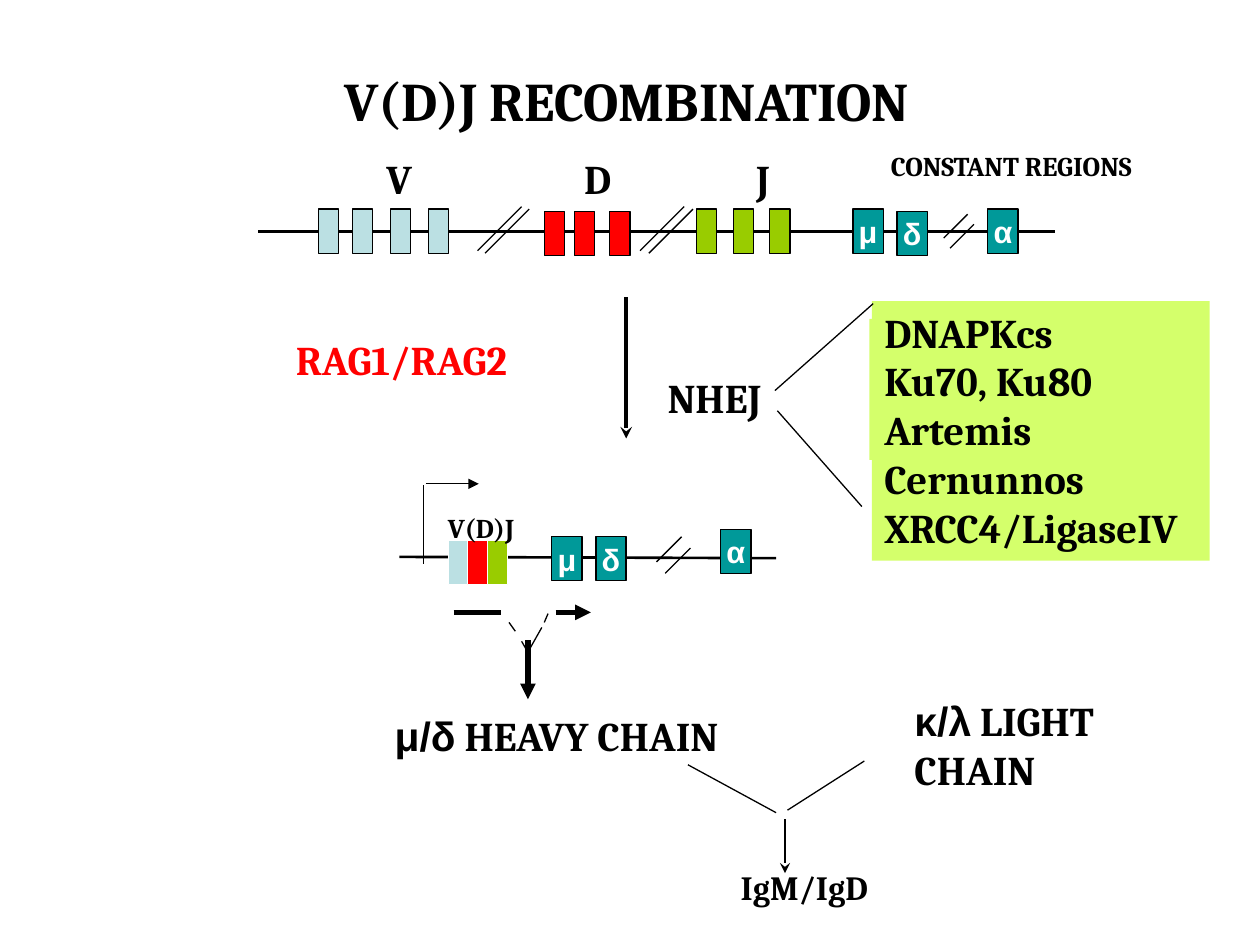
from typing import NamedTuple, Optional

from lxml import etree
from pptx import Presentation
from pptx.dml.color import RGBColor
from pptx.enum.shapes import MSO_CONNECTOR, MSO_SHAPE
from pptx.enum.text import MSO_ANCHOR, MSO_AUTO_SIZE, PP_ALIGN
from pptx.oxml.ns import qn
from pptx.util import Inches, Pt

STRAIGHT = MSO_CONNECTOR.STRAIGHT
RECT = MSO_SHAPE.RECTANGLE
TOP, MIDDLE = MSO_ANCHOR.TOP, MSO_ANCHOR.MIDDLE
FIT, FIXED = MSO_AUTO_SIZE.SHAPE_TO_FIT_TEXT, MSO_AUTO_SIZE.NONE
LEFT, CENTER, RIGHT = PP_ALIGN.LEFT, PP_ALIGN.CENTER, PP_ALIGN.RIGHT

BLACK = RGBColor(0x00, 0x00, 0x00)
WHITE = RGBColor(0xFF, 0xFF, 0xFF)
RED = RGBColor(0xFF, 0x00, 0x00)
PALE_BLUE = RGBColor(0xBB, 0xE0, 0xE3)
GREEN = RGBColor(0x99, 0xCC, 0x00)
TEAL = RGBColor(0x00, 0x99, 0x99)
LIME = RGBColor(0xD4, 0xFF, 0x6B)

SERIF, SANS = "Cambria", "Arial"
SEGMENT_W, CONSTANT_W, GENE_H = 0.16, 0.24, 0.35


class Line(NamedTuple):
    x1: float
    y1: float
    x2: float
    y2: float
    width: float = 0.75
    tail: str = ""


class Slash(NamedTuple):
    x: float
    y: float
    size: float
    dx: float
    dy: float


class Segments(NamedTuple):
    lefts: tuple[float, ...]
    y: float
    fill: RGBColor
    outline: RGBColor = BLACK


class Constant(NamedTuple):
    x: float
    y: float
    name: str


class Label(NamedTuple):
    x: float
    y: float
    w: float
    h: float
    text: str
    size: float = 23.3
    align: PP_ALIGN = LEFT
    color: RGBColor = BLACK
    symbol: str = ""
    wrap: bool = False


BACKBONES = [Line(3.17, 4.42, 6.16, 4.43, 1.5), Line(2.05, 1.84, 8.37, 1.84, 1.5)]

SEGMENTS = [
    Segments((2.53, 2.8, 3.1, 3.4), 1.66, PALE_BLUE),
    Segments((4.32, 4.56, 4.84), 1.68, RED),
    Segments((5.53, 5.82, 6.11), 1.66, GREEN),
    Segments((3.56,), 4.29, PALE_BLUE, WHITE),
    Segments((3.71,), 4.29, RED, WHITE),
    Segments((3.87,), 4.29, GREEN, WHITE),
]

CONSTANTS = [
    Constant(6.77, 1.66, "μ"),
    Constant(7.12, 1.68, "δ"),
    Constant(7.84, 1.66, "α"),
    Constant(4.38, 4.26, "μ"),
    Constant(4.73, 4.26, "δ"),
    Constant(5.72, 4.2, "α"),
]

SLASHES = [
    Slash(4.14, 1.64, 0.35, 0.06, 0.02),
    Slash(5.43, 1.64, 0.35, 0.07, 0.02),
    Slash(7.68, 1.7, 0.19, 0.05, 0.08),
    Slash(5.41, 4.26, 0.2, 0.07, 0.09),
]

LINES = [
    Line(3.6, 4.86, 3.98, 4.86, 3),
    Line(4.04, 4.94, 4.09, 5.01),
    Line(4.14, 5.09, 4.18, 5.16),
    Line(4.3, 4.98, 4.21, 5.14),
    Line(4.35, 4.87, 4.32, 4.94),
    Line(4.41, 4.86, 4.69, 4.86, 3, "triangle"),
    Line(4.19, 5.08, 4.19, 5.55, 3, "triangle"),
    Line(3.36, 3.85, 3.36, 4.48),
    Line(3.38, 3.84, 3.8, 3.84, tail="triangle"),
    Line(4.97, 2.36, 4.97, 3.48, 2.25, "stealth"),
    Line(6.15, 3.1, 6.93, 2.41),
    Line(6.17, 3.26, 6.84, 4.02),
    Line(5.46, 6.07, 6.16, 6.45),
    Line(6.86, 6.04, 6.25, 6.43),
    Line(6.23, 6.5, 6.23, 6.93, tail="stealth"),
]

LABELS = [
    Label(2.33, 0.48, 5.29, 0.59, "V(D)J RECOMBINATION", 31.1, CENTER),
    Label(2.93, 1.17, 0.44, 0.49, "V", align=RIGHT),
    Label(4.51, 1.17, 0.44, 0.49, "D", align=RIGHT),
    Label(5.85, 1.17, 0.36, 0.49, "J", align=RIGHT),
    Label(6.62, 1.14, 2.46, 0.36, "CONSTANT REGIONS", 15.5, RIGHT),
    Label(2.25, 2.61, 2.07, 0.49, "RAG1/RAG2", color=RED),
    Label(5.2, 2.91, 1.07, 0.49, "NHEJ"),
    Label(3.41, 4.01, 0.77, 0.36, "V(D)J", 15.5, RIGHT),
    Label(2.75, 5.59, 3.05, 0.49, " HEAVY CHAIN", align=RIGHT, symbol="μ/δ"),
    Label(7.16, 5.47, 2.23, 0.89, " LIGHT CHAIN", symbol="κ/λ", wrap=True),
    Label(5.78, 6.83, 1.22, 0.43, "IgM/IgD", 19.4),
]

REPAIR_FACTORS = "DNAPKcs\nKu70, Ku80\nArtemis\nCernunnos\nXRCC4/LigaseIV"


def write(sp, text: str, *, size: float = 23.3, font: str = SERIF,
          color: RGBColor = BLACK, align: PP_ALIGN = LEFT, symbol: str = "",
          wrap: bool = False, anchor: MSO_ANCHOR = TOP,
          fit: MSO_AUTO_SIZE = FIT) -> None:
    tf = sp.text_frame
    tf.word_wrap, tf.auto_size, tf.vertical_anchor = wrap, fit, anchor
    for i, content in enumerate(text.split("\n")):
        p = tf.add_paragraph() if i else tf.paragraphs[0]
        p.alignment = align
        for part, face in ((symbol, SANS), (content, font)):
            if part:
                r = p.add_run()
                r.text = part
                r.font.name, r.font.size, r.font.bold = face, Pt(size), True
                r.font.color.rgb = color


def add_rect(s, x: float, y: float, w: float, h: float, fill: RGBColor,
             outline: Optional[RGBColor] = None):
    sp = s.shapes.add_shape(RECT, Inches(x), Inches(y), Inches(w), Inches(h))
    sp.shadow.inherit = False
    sp.fill.solid()
    sp.fill.fore_color.rgb = fill
    if outline is None:
        sp.line.fill.background()
    else:
        sp.line.color.rgb = outline
        sp.line.width = Pt(0.75)
    return sp


def add_line(s, line: Line) -> None:
    cx = s.shapes.add_connector(STRAIGHT, Inches(line.x1), Inches(line.y1),
                                Inches(line.x2), Inches(line.y2))
    cx.line.color.rgb = BLACK
    cx.line.width = Pt(line.width)
    if line.tail:
        etree.SubElement(cx.line._get_or_add_ln(), qn("a:tailEnd"), type=line.tail)
    etree.SubElement(cx._element.spPr, qn("a:effectLst"))


def add_slash(s, k: Slash) -> None:
    for x, y in ((k.x, k.y), (k.x + k.dx, k.y + k.dy)):
        add_line(s, Line(x, y, x - k.size, y + k.size))


def add_label(s, k: Label) -> None:
    sp = s.shapes.add_textbox(Inches(k.x), Inches(k.y), Inches(k.w), Inches(k.h))
    write(sp, k.text, size=k.size, align=k.align, color=k.color,
          symbol=k.symbol, wrap=k.wrap)


def main() -> None:
    prs = Presentation()
    prs.slide_width, prs.slide_height = Inches(10), Inches(7.5)
    s = prs.slides.add_slide(prs.slide_layouts[6])
    for line in BACKBONES:
        add_line(s, line)
    for group in SEGMENTS:
        for x in group.lefts:
            add_rect(s, x, group.y, SEGMENT_W, GENE_H, group.fill, group.outline)
    for gene in CONSTANTS:
        sp = add_rect(s, gene.x, gene.y, CONSTANT_W, GENE_H, TEAL, BLACK)
        write(sp, gene.name, size=17.5, font=SANS, color=WHITE, align=CENTER,
              anchor=MIDDLE, fit=FIXED)
    for slash in SLASHES:
        add_slash(s, slash)
    add_rect(s, 6.9, 2.53, 1.7, 1.12, LIME)
    write(add_rect(s, 6.92, 2.39, 2.68, 2.06, LIME), REPAIR_FACTORS)
    for line in LINES:
        add_line(s, line)
    for label in LABELS:
        add_label(s, label)
    prs.save("out.pptx")


if __name__ == "__main__":
    main()
